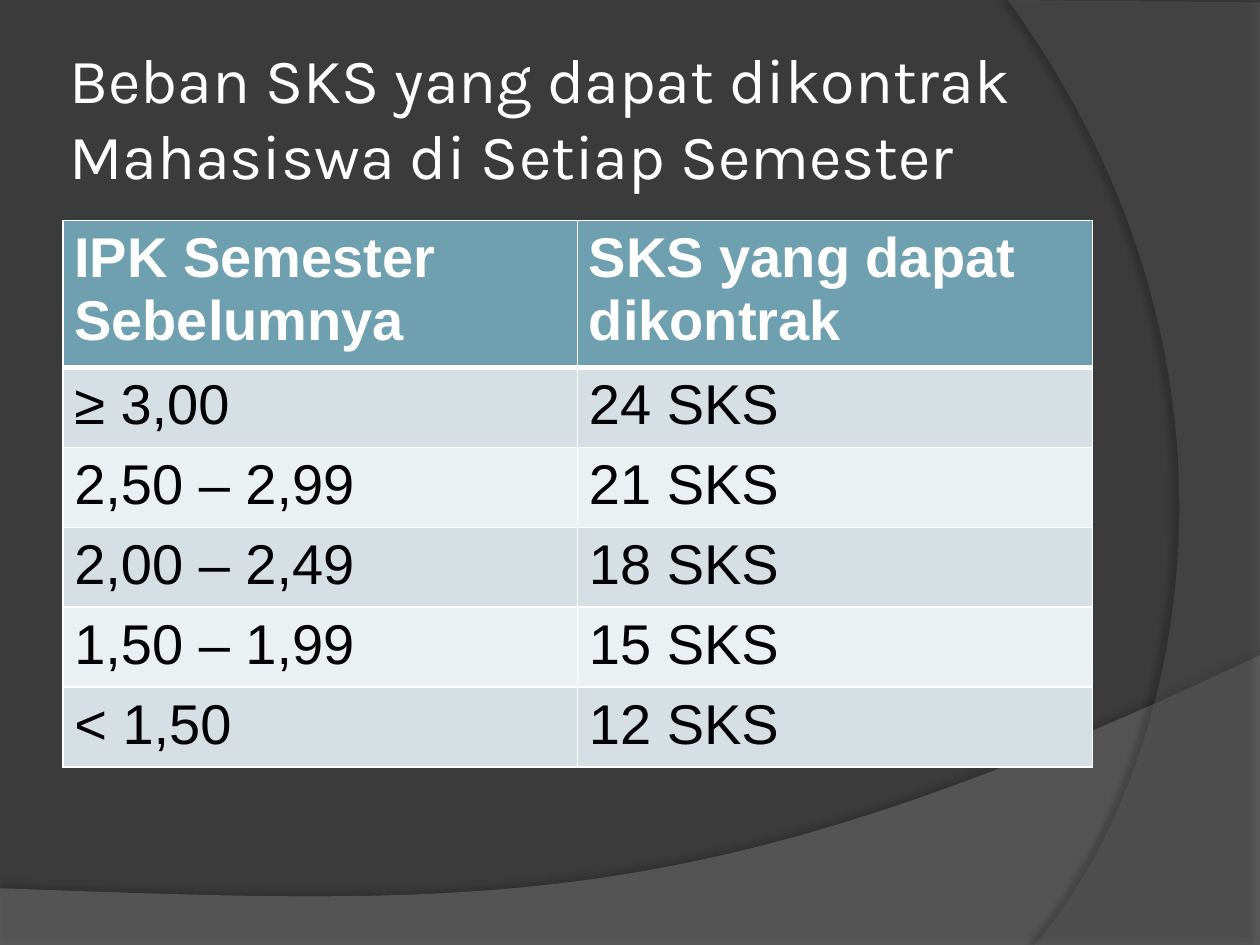
from dataclasses import dataclass

from lxml import etree
from pptx import Presentation
from pptx.dml.color import RGBColor
from pptx.enum.text import MSO_ANCHOR
from pptx.oxml.ns import qn
from pptx.util import Inches, Pt

MIDDLE = MSO_ANCHOR.MIDDLE


@dataclass(frozen=True)
class Theme:
    background: str = "3B3B3B"
    wave: str = "7F7F7F"
    arc: str = "5E5E5E"
    white: str = "FFFFFF"
    black: str = "000000"
    header: str = "6EA0B0"
    bands: tuple = ("D5DFE4", "EBF0F2")
    title_font: str = "Karla"
    body_font: str = "Arial"
    title_size: int = 36
    body_size: int = 32
    border: int = 1
    header_rule: int = 3


THEME = Theme()

TITLE = "Beban SKS yang dapat dikontrak Mahasiswa di Setiap Semester"
ROWS = [
    ("IPK Semester Sebelumnya", "SKS yang dapat dikontrak"),
    ("≥ 3,00", "24 SKS"),
    ("2,50 – 2,99", "21 SKS"),
    ("2,00 – 2,49", "18 SKS"),
    ("1,50 – 1,99", "15 SKS"),
    ("< 1,50", "12 SKS"),
]


def set_fill(fill, color):
    fill.solid()
    fill.fore_color.rgb = RGBColor.from_string(color)


def add_color(parent, color, opacity=100):
    fill = etree.SubElement(parent, qn("a:srgbClr"), val=color)
    etree.SubElement(fill, qn("a:alpha"), val=str(opacity * 1000))


def add_run(p, text, font, size, color, bold=False):
    r = p.add_run()
    r.text = text
    r.font.name = font
    r.font.size = Pt(size)
    r.font.bold = bold
    r.font.color.rgb = RGBColor.from_string(color)


def bezier(p0, p1, p2, p3, steps=48):
    points = []
    for i in range(steps + 1):
        t = i / steps
        u = 1 - t
        weights = (u**3, 3 * u * u * t, 3 * u * t * t, t**3)
        points.append(tuple(
            sum(w * p[axis] for w, p in zip(weights, (p0, p1, p2, p3)))
            for axis in (0, 1)
        ))
    return points


def add_swoosh(slide, points, color, opacity, shadow_opacity, distance, angle):
    corners = [(Inches(x), Inches(y)) for x, y in points]
    builder = slide.shapes.build_freeform(*corners[0])
    builder.add_line_segments(corners[1:], close=True)
    sp = builder.convert_to_shape()
    sp.line.fill.background()
    set_fill(sp.fill, color)
    tint = sp.fill._xPr.find(qn("a:solidFill"))[0]
    etree.SubElement(tint, qn("a:alpha"), val=str(opacity * 1000))
    sp.shadow.inherit = False
    effects = sp._element.spPr.find(qn("a:effectLst"))
    shadow = etree.SubElement(
        effects, qn("a:outerShdw"), blurRad=str(Pt(4)), dist=str(Pt(distance)),
        dir=str(angle * 60000), algn="ctr", rotWithShape="0",
    )
    add_color(shadow, THEME.black, shadow_opacity)


def add_title(slide, text):
    sp = slide.shapes.add_textbox(Inches(0.5), Inches(0.3), Inches(8.17), Inches(1.25))
    tf = sp.text_frame
    tf.word_wrap = True
    tf.vertical_anchor = MIDDLE
    tf.margin_left = tf.margin_right = Inches(0.05)
    tf.margin_top = tf.margin_bottom = Inches(0.05)
    add_run(tf.paragraphs[0], text, THEME.title_font, THEME.title_size, THEME.white)


def set_borders(cell, top, bottom):
    tc_pr = cell._tc.get_or_add_tcPr()
    widths = {"lnL": THEME.border, "lnR": THEME.border, "lnT": top, "lnB": bottom}
    for side, width in widths.items():
        line = etree.SubElement(tc_pr, qn(f"a:{side}"), w=str(Pt(width)))
        add_color(etree.SubElement(line, qn("a:solidFill")), THEME.white)


def style_cell(cell, text, row):
    header = row == 0
    set_borders(
        cell,
        top=THEME.header_rule if row == 1 else THEME.border,
        bottom=THEME.header_rule if header else THEME.border,
    )
    set_fill(cell.fill, THEME.header if header else THEME.bands[(row - 1) % 2])
    cell.margin_left = cell.margin_right = Inches(0.09)
    cell.margin_top = cell.margin_bottom = Inches(0.05)
    color = THEME.white if header else THEME.black
    p = cell.text_frame.paragraphs[0]
    add_run(p, text, THEME.body_font, THEME.body_size, color, header)


def add_credit_table(slide, rows):
    frame = slide.shapes.add_table(
        len(rows), len(rows[0]), Inches(0.5), Inches(1.75), Inches(8.17), Inches(4.09)
    )
    table = frame.table
    table.horz_banding = False
    for i, values in enumerate(rows):
        table.rows[i].height = Inches(0.6 if i else 1.09)
        for j, text in enumerate(values):
            style_cell(table.cell(i, j), text, i)


def main():
    prs = Presentation()
    prs.slide_width = Inches(10)
    prs.slide_height = Inches(7.5)
    slide = prs.slides.add_slide(prs.slide_layouts[6])
    set_fill(slide.background.fill, THEME.background)

    wave = [(0, 7.51), (10, 7.51)]
    wave += bezier((10, 5.2), (5.59, 7.29), (3.91, 7.19), (0, 7.05))
    add_swoosh(slide, wave, THEME.wave, 45, 35, 3.5, 270)

    arc = [(10, 0.02), (10, 7.5)]
    arc += bezier((8.21, 7.5), (9.35, 6.19), (10.18, 3), (8, 0))
    add_swoosh(slide, arc, THEME.arc, 40, 45, 4, 180)

    add_title(slide, TITLE)
    add_credit_table(slide, ROWS)
    prs.save("out.pptx")


if __name__ == "__main__":
    main()
